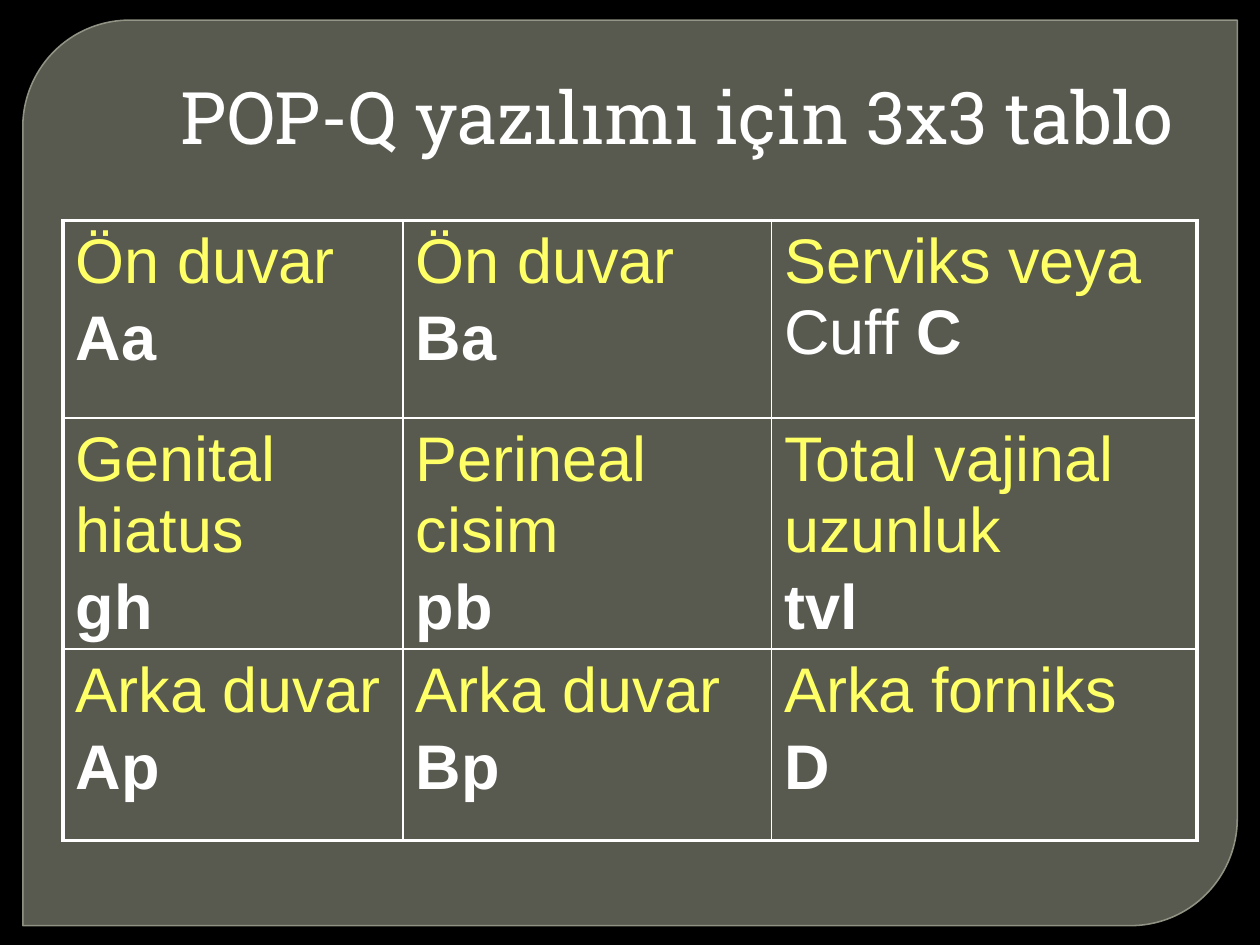
import pptx
import pptx.util
import pptx.dml.color
import pptx.enum.shapes
import pptx.enum.text
import pptx.oxml
from lxml import etree

Pt = pptx.util.Pt

# Content: each cell is a list of paragraphs, each paragraph a list of (text, style)
TITLE = "POP-Q yazılımı için 3x3 tablo"
WHITE, YELLOW = "FFFFFF", "FFFF66"
STYLES = {"name": (YELLOW, False), "plain": (WHITE, False), "code": (WHITE, True)}


def measure(name, code):
    return [[(name, "name")], [(code, "code")]]


GRID = [
    [measure("Ön duvar", "Aa"), measure("Ön duvar", "Ba"),
     [[("Serviks veya ", "name"), ("Cuff ", "plain"), ("C", "code")]]],
    [measure("Genital hiatus", "gh"), measure("Perineal cisim", "pb"),
     measure("Total vajinal uzunluk", "tvl")],
    [measure("Arka duvar", "Ap"), measure("Arka duvar", "Bp"),
     measure("Arka forniks", "D")],
]
COLUMN_WIDTHS = [194.4, 210.6, 243]
ROW_HEIGHTS = [113, 131, 109.4]
OUTER, INNER = 2.25, 1


def colour(value):
    return pptx.dml.color.RGBColor.from_string(value)


def apply(target, **values):
    for name, value in values.items():
        setattr(target, name, value)


def set_alpha(fill_parent, percent):
    tag = pptx.oxml.ns.qn("a:srgbClr")
    tint = next(fill_parent.iter(tag))
    etree.SubElement(tint, pptx.oxml.ns.qn("a:alpha"), val=str(percent * 1000))


def add_span(para, text, font, size, hue, bold=False):
    span = para.add_run()
    span.text = text
    apply(span.font, name=font, size=Pt(size), bold=bold)
    span.font.color.rgb = colour(hue)


def set_borders(cell, widths):
    properties = cell._tc.get_or_add_tcPr()
    for position, (side, width) in enumerate(widths.items()):
        properties.insert(position, pptx.oxml.parse_xml(
            f'<a:ln{side} {pptx.oxml.ns.nsdecls("a")} w="{Pt(width)}"><a:solidFill>'
            f'<a:srgbClr val="{WHITE}"/></a:solidFill></a:ln{side}>'))


deck = pptx.Presentation()
apply(deck, slide_width=Pt(720), slide_height=Pt(540))
page = deck.slides.add_slide(deck.slide_layouts[5])
page.background.fill.solid()
page.background.fill.fore_color.rgb = colour("000000")

# Rounded panel, placed behind the title
panel = page.shapes.add_shape(
    pptx.enum.shapes.MSO_SHAPE.ROUND_2_DIAG_RECTANGLE,
    Pt(13), Pt(11.5), Pt(694), Pt(517.5))
panel.adjustments[0], panel.adjustments[1] = 0.118, 0
panel.shadow.inherit = False
panel.fill.solid()
panel.fill.fore_color.rgb = colour("888B7B")
panel.line.color.rgb = colour("9DA090")
panel.line.width = Pt(0.87)
outline = panel.line._get_or_add_ln()
set_alpha(panel._element.spPr, 65)
set_alpha(outline, 88)
title = page.shapes.title
title._element.addprevious(panel._element)

# Title
apply(title, left=Pt(84), top=Pt(24), width=Pt(594), height=Pt(70.5))
apply(title.text_frame, word_wrap=True,
      auto_size=pptx.enum.text.MSO_AUTO_SIZE.NONE,
      vertical_anchor=pptx.enum.text.MSO_ANCHOR.BOTTOM)
heading = title.text_frame.paragraphs[0]
heading.alignment = pptx.enum.text.PP_ALIGN.RIGHT
add_span(heading, TITLE, "Roboto Slab", 41.4, WHITE)

# Table
frame = page.shapes.add_table(
    len(GRID), len(GRID[0]), Pt(36), Pt(126),
    Pt(sum(COLUMN_WIDTHS)), Pt(sum(ROW_HEIGHTS)))
table = frame.table
apply(table, first_row=False, horz_banding=False)
for column, width in zip(table.columns, COLUMN_WIDTHS):
    column.width = Pt(width)
for row, height in zip(table.rows, ROW_HEIGHTS):
    row.height = Pt(height)

last_row, last_column = len(GRID) - 1, len(GRID[0]) - 1
for r, cells in enumerate(GRID):
    for c, paragraphs in enumerate(cells):
        cell = table.cell(r, c)
        cell.fill.background()
        edges = {"L": c == 0, "R": c == last_column, "T": r == 0, "B": r == last_row}
        set_borders(cell, {side: OUTER if edge else INNER
                           for side, edge in edges.items()})
        for number, spans in enumerate(paragraphs):
            text = cell.text_frame
            para = text.add_paragraph() if number else text.paragraphs[0]
            para.space_before = Pt(3.6)
            for words, style in spans:
                hue, bold = STYLES[style]
                add_span(para, words, "Arial", 36, hue, bold)

deck.save("out.pptx")
